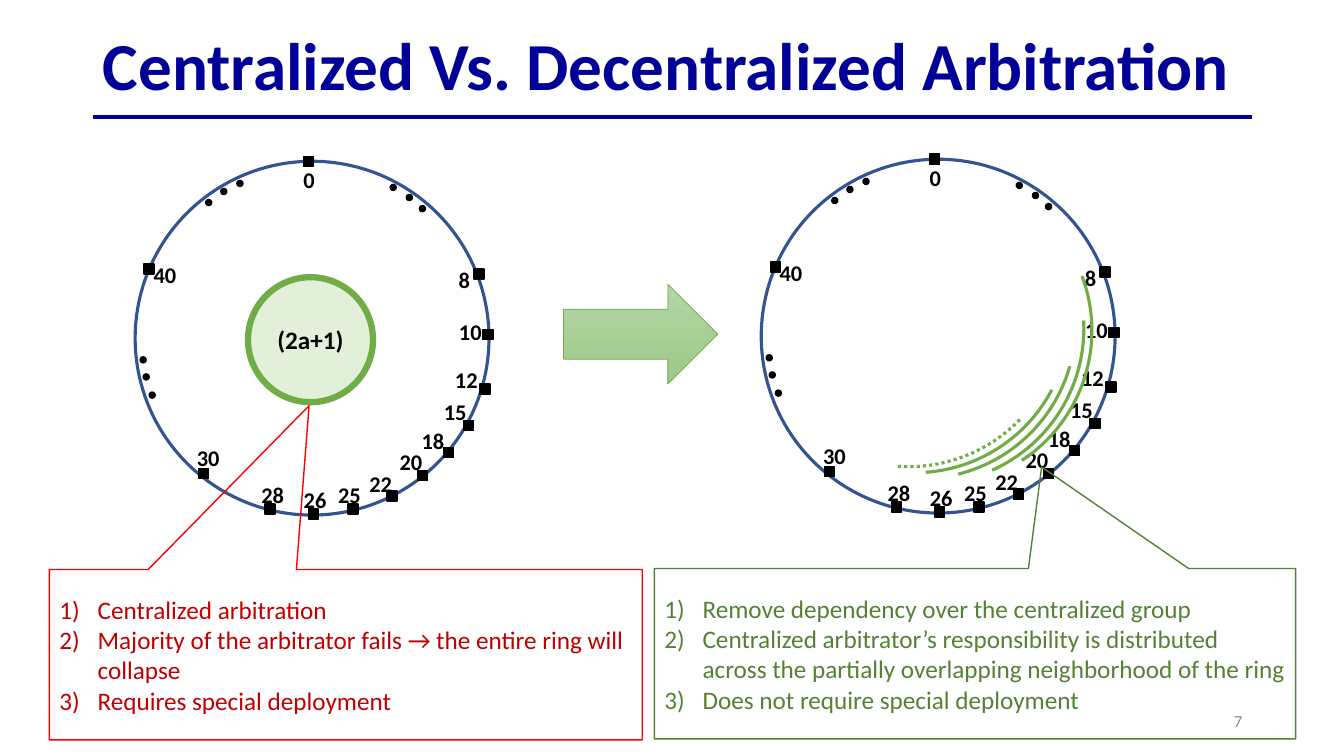
"""Build the slide comparing centralized and decentralized arbitration."""
from typing import NamedTuple, Optional

from lxml.etree import SubElement
from pptx import Presentation
from pptx.dml.color import RGBColor
from pptx.enum.dml import MSO_LINE as Dash
from pptx.enum.shapes import MSO_CONNECTOR as Connector, MSO_SHAPE as Preset
from pptx.enum.text import MSO_ANCHOR as Anchor, PP_ALIGN as Align
from pptx.oxml.ns import qn
from pptx.shapes.autoshape import Shape
from pptx.slide import Slide
from pptx.text.text import _Paragraph as Paragraph
from pptx.util import Inches, Pt

NAVY = RGBColor(0x00, 0x00, 0x99)
RING_BLUE = RGBColor(0x32, 0x54, 0x91)
BLACK = RGBColor(0x00, 0x00, 0x00)
GRAY = RGBColor(0x8C, 0x8C, 0x8C)
RED = RGBColor(0xFF, 0x00, 0x00)
DARK_RED = RGBColor(0xC0, 0x00, 0x00)
GREEN = RGBColor(0x70, 0xAD, 0x47)
DARK_GREEN = RGBColor(0x54, 0x82, 0x35)
PALE_GREEN = RGBColor(0xE2, 0xF0, 0xD9)
ARROW_TOP = RGBColor(0xB5, 0xD5, 0xA7)
ARROW_BOTTOM = RGBColor(0x9C, 0xC9, 0x87)

FONT = "Calibri"
RING_SIZE, MARK_SIZE, DOT_SIZE, ARC_SIZE = 3.51, 0.1, 0.06, 3.08
ARC_UNIT = 0.6


class Box(NamedTuple):
    left: float
    top: float
    width: float
    height: float


class Node(NamedTuple):
    label: str
    mark_x: float
    mark_y: float
    label_x: float
    label_y: float


class Neighborhood(NamedTuple):
    left: float
    top: float
    start: float
    end: float
    dash: Optional[Dash] = None


class Callout(NamedTuple):
    box: Box
    tip: tuple[float, float]
    border: RGBColor
    ink: RGBColor
    points: tuple[str, ...]


RING_ORIGINS = ((1.34, 1.6), (7.55, 1.58))
NODES = (
    Node("0", 1.67, -0.05, 1.55, 0),
    Node("8", 3.36, 1.07, 3.09, 0.99),
    Node("10", 3.45, 1.67, 3.09, 1.51),
    Node("12", 3.42, 2.21, 3.05, 1.98),
    Node("15", 3.26, 2.57, 2.94, 2.3),
    Node("18", 3.06, 2.84, 2.72, 2.59),
    Node("20", 2.8, 3.07, 2.5, 2.8),
    Node("22", 2.5, 3.27, 2.2, 3.01),
    Node("25", 2.11, 3.4, 1.89, 3.12),
    Node("26", 1.72, 3.45, 1.55, 3.17),
    Node("28", 1.29, 3.4, 1.13, 3.12),
    Node("30", 0.63, 3.05, 0.49, 2.76),
    Node("40", 0.09, 1.02, 0.06, 0.94),
)
DOTS = (
    (0.05, 1.94), (0.08, 2.11), (0.14, 2.29),
    (2.82, 0.44), (2.69, 0.33), (2.53, 0.23),
    (1.01, 0.19), (0.85, 0.27), (0.7, 0.38),
)
NEIGHBORHOODS = (
    Neighborhood(7.75, 1.74, 339.44, 56.7),
    Neighborhood(7.67, 1.72, 357, 65.86),
    Neighborhood(7.59, 1.67, 15.95, 75.98),
    Neighborhood(7.53, 1.61, 27.79, 85.81),
    Neighborhood(7.47, 1.55, 44.15, 94.84, Dash.ROUND_DOT),
)
CALLOUTS = (
    Callout(Box(0.49, 5.65, 5.88, 1.69), (-0.062, -1.462), RED, DARK_RED, (
        "Centralized arbitration",
        "Majority of the arbitrator fails → the entire ring will collapse",
        "Requires special deployment",
    )),
    Callout(Box(6.49, 5.64, 6.36, 1.69), (0.104, -1.096), DARK_GREEN, DARK_GREEN, (
        "Remove dependency over the centralized group",
        "Centralized arbitrator’s responsibility is distributed across the "
        "partially overlapping neighborhood of the ring",
        "Does not require special deployment",
    )),
)


def style_text(paragraph: Paragraph, size: float, color: RGBColor,
               align: Align, bold: bool = False) -> None:
    paragraph.alignment = align
    font = paragraph.font
    font.name, font.size, font.bold = FONT, Pt(size), bold
    font.color.rgb = color


def add_preset(slide: Slide, preset: Preset, box: Box, line: RGBColor,
               width: float, fill: Optional[RGBColor] = None) -> Shape:
    shape = slide.shapes.add_shape(preset, *map(Inches, box))
    shape.shadow.inherit = False
    if fill is None:
        shape.fill.background()
    else:
        shape.fill.solid()
        shape.fill.fore_color.rgb = fill
    shape.line.color.rgb = line
    shape.line.width = Pt(width)
    return shape


def add_label(slide: Slide, text: str, box: Box, size: float, color: RGBColor,
              align: Align, bold: bool = False, anchor: Anchor = Anchor.TOP) -> None:
    frame = slide.shapes.add_textbox(*map(Inches, box)).text_frame
    frame.word_wrap = False
    frame.vertical_anchor = anchor
    frame.text = text
    style_text(frame.paragraphs[0], size, color, align, bold)


def add_ring(slide: Slide, x: float, y: float) -> None:
    add_preset(slide, Preset.OVAL, Box(x, y, RING_SIZE, RING_SIZE), RING_BLUE, 2.25)
    for node in NODES:
        mark = Box(x + node.mark_x, y + node.mark_y, MARK_SIZE, MARK_SIZE)
        add_preset(slide, Preset.RECTANGLE, mark, BLACK, 1, BLACK)
        label_width = 0.23 + 0.12 * len(node.label)
        add_label(slide, node.label, Box(x + node.label_x, y + node.label_y, label_width, 0.41),
                  16, BLACK, Align.CENTER, bold=True)
    for dot_x, dot_y in DOTS:
        add_preset(slide, Preset.OVAL, Box(x + dot_x, y + dot_y, DOT_SIZE, DOT_SIZE),
                   BLACK, 1, BLACK)


def add_neighborhood(slide: Slide, hood: Neighborhood) -> None:
    arc = add_preset(slide, Preset.ARC, Box(hood.left, hood.top, ARC_SIZE, ARC_SIZE), GREEN, 2.25)
    arc.adjustments[0] = hood.start * ARC_UNIT
    arc.adjustments[1] = hood.end * ARC_UNIT
    if hood.dash is not None:
        arc.line.dash_style = hood.dash


def add_callout(slide: Slide, callout: Callout) -> None:
    shape = add_preset(slide, Preset.RECTANGULAR_CALLOUT, callout.box, callout.border, 1)
    shape.adjustments[0], shape.adjustments[1] = callout.tip
    frame = shape.text_frame
    frame.word_wrap = True
    frame.vertical_anchor = Anchor.MIDDLE
    frame.text = "\n".join(callout.points)
    for paragraph in frame.paragraphs:
        style_text(paragraph, 18, callout.ink, Align.LEFT)
        properties = paragraph._p.get_or_add_pPr()
        properties.set("marL", str(Inches(0.38)))
        properties.set("indent", str(-Inches(0.38)))
        properties.insert_element_before(
            SubElement(properties, qn("a:buAutoNum"), type="arabicParenR"), "a:defRPr")


def add_title(slide: Slide) -> None:
    title = slide.shapes.title
    title.left, title.top, title.width, title.height = map(Inches, (0.92, 0, 11.5, 1.37))
    title.text_frame.text = "Centralized Vs. Decentralized Arbitration"
    title.text_frame.vertical_anchor = Anchor.MIDDLE
    heading = title.text_frame.paragraphs[0]
    heading.line_spacing = 0.9
    style_text(heading, 48, NAVY, Align.LEFT, bold=True)
    rule = slide.shapes.add_connector(Connector.STRAIGHT, *map(Inches, (0.92, 1.16, 12.42, 1.16)))
    rule.line.color.rgb = NAVY
    rule.line.width = Pt(3)
    SubElement(rule._element.spPr, qn("a:effectLst"))


def main() -> None:
    deck = Presentation()
    deck.slide_width, deck.slide_height = Inches(13.33), Inches(7.5)
    slide = deck.slides.add_slide(deck.slide_layouts[5])
    add_title(slide)
    add_label(slide, "7", Box(9.42, 6.95, 3, 0.4), 12, GRAY, Align.RIGHT, anchor=Anchor.MIDDLE)
    for origin in RING_ORIGINS:
        add_ring(slide, *origin)
    arbitrator = add_preset(slide, Preset.OVAL, Box(2.46, 2.75, 1.24, 1.24), GREEN, 4.5, PALE_GREEN)
    arbitrator.text_frame.word_wrap = False
    arbitrator.text_frame.text = "(2a+1)"
    style_text(arbitrator.text_frame.paragraphs[0], 18, BLACK, Align.CENTER, bold=True)
    for hood in NEIGHBORHOODS:
        add_neighborhood(slide, hood)
    arrow = add_preset(slide, Preset.RIGHT_ARROW, Box(5.59, 2.82, 1.53, 0.99), GREEN, 0.5)
    arrow.fill.gradient()
    arrow.fill.gradient_angle = 270
    for stop, color in zip(arrow.fill.gradient_stops, (ARROW_TOP, ARROW_BOTTOM)):
        stop.color.rgb = color
    for callout in CALLOUTS:
        add_callout(slide, callout)
    deck.save("out.pptx")


if __name__ == "__main__":
    main()
